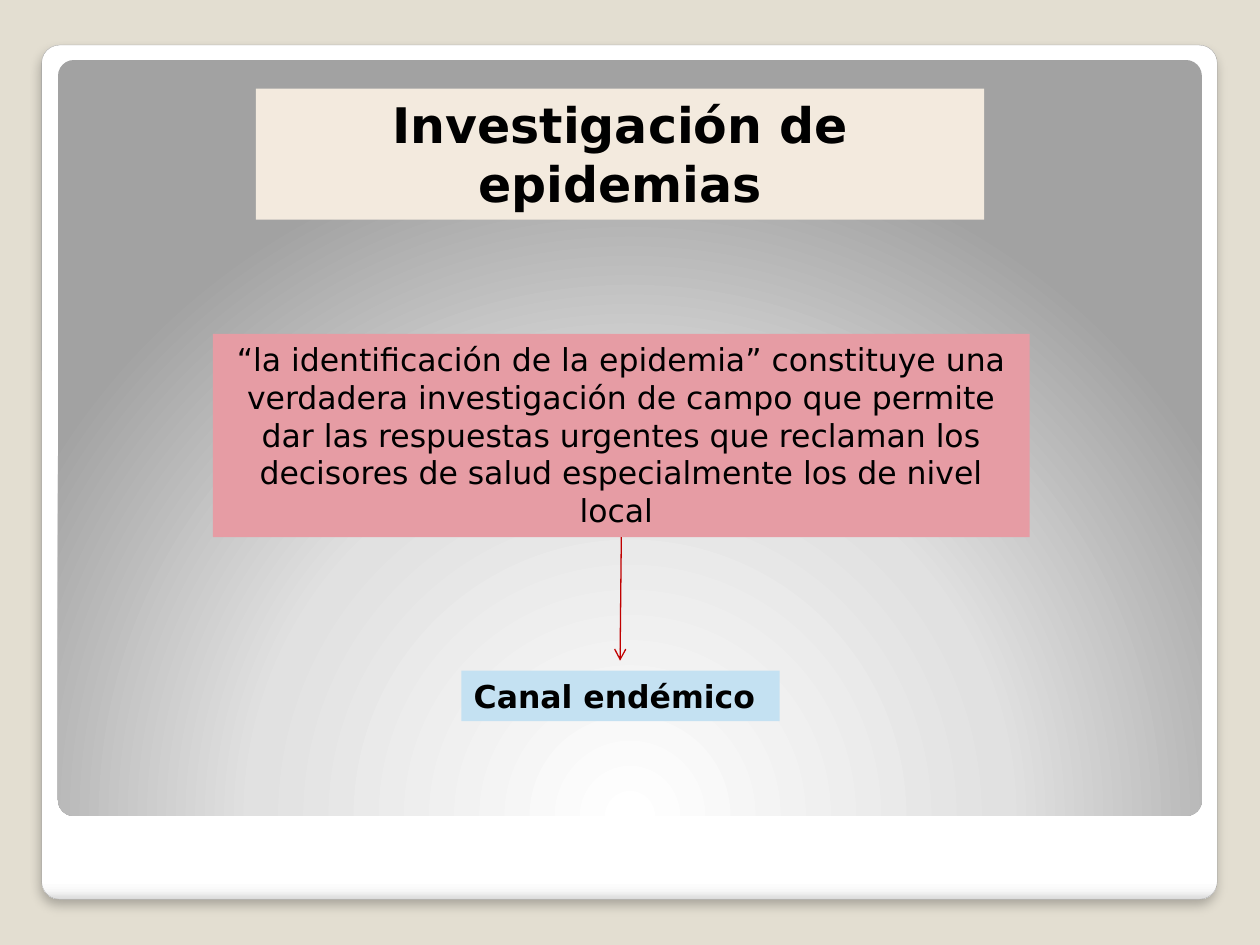
from lxml import etree
from pptx import Presentation
from pptx.dml.color import RGBColor
from pptx.enum import shapes as sh, text as tx
from pptx.oxml.ns import qn
from pptx.util import Cm, Pt

SAND = RGBColor(0xE3, 0xDE, 0xD1)
CREAM = RGBColor(0xF3, 0xEA, 0xDE)
PINK = RGBColor(0xE6, 0x9C, 0xA4)
SKY = RGBColor(0xC4, 0xE1, 0xF2)
RED = RGBColor(0xC0, 0x00, 0x00)
GREY = RGBColor(0xA4, 0xA4, 0xA4)
BLACK = RGBColor(0x00, 0x00, 0x00)
WHITE = RGBColor(0xFF, 0xFF, 0xFF)
MIST = RGBColor(0xF7, 0xF7, 0xF7)
SILVER = RGBColor(0xDA, 0xDA, 0xDA)
PALE = RGBColor(0xE1, 0xE1, 0xE1)
STEEL = RGBColor(0xA2, 0xA2, 0xA2)
FONT = "DejaVu Sans"


def node(parent, tag, **attrs):
    return etree.SubElement(parent, qn(tag), {k: str(v) for k, v in attrs.items()})


def shade(shape, stops):
    shape.fill.background()
    props = shape.element.spPr
    grad = etree.Element(qn("a:gradFill"), rotWithShape="1")
    props.replace(props.find(qn("a:noFill")), grad)
    list_ = node(grad, "a:gsLst")
    for pos, color in stops:
        stop = node(list_, "a:gs", pos=pos * 1000)
        node(stop, "a:srgbClr", val=color)
    return grad


def panel(slide, box, stops):
    shape = slide.shapes.add_shape(sh.MSO_SHAPE.ROUNDED_RECTANGLE, *map(Cm, box))
    shape.adjustments[0] = 0.021
    shape.line.fill.background()
    shape.shadow.inherit = False
    return shape, shade(shape, stops)


def frame(slide, box):
    x, y, w, h = box
    card, grad = panel(slide, box, [(0, WHITE), (98, WHITE), (99, MIST), (100, SILVER)])
    node(grad, "a:lin", ang=5400000, scaled=0)
    card.line.color.rgb = GREY
    card.line.width = Pt(0.16)
    glow = node(card.element.spPr.find(qn("a:effectLst")), "a:outerShdw",
                blurRad=Pt(6), dist=Pt(4), dir=5400000, algn="t", rotWithShape=0)
    node(node(glow, "a:srgbClr", val=BLACK), "a:alpha", val=25000)

    inner = (x + 0.33, y + 0.3, w - 0.64, h - 1.98)
    _, grad = panel(slide, inner, [(0, WHITE), (55, PALE), (100, STEEL)])
    round_ = node(grad, "a:path", path="circle")
    node(round_, "a:fillToRect", l=50000, t=175000, r=50000, b=-75000)


def label(slide, box, words, size, color, bold=False, align=tx.PP_ALIGN.CENTER):
    shape = slide.shapes.add_textbox(*map(Cm, box))
    shape.fill.solid()
    shape.fill.fore_color.rgb = color
    body = shape.text_frame
    body.word_wrap = True
    para = body.paragraphs[0]
    para.alignment = align
    run = para.add_run()
    run.text = words
    run.font.name = FONT
    run.font.size = Pt(size)
    run.font.bold = bold
    run.font.color.rgb = BLACK
    return shape


def arrow(slide, start, end):
    line = slide.shapes.add_connector(sh.MSO_CONNECTOR.STRAIGHT, 0, 0, *map(Cm, end))
    line.begin_connect(start, 2)
    line.line.color.rgb = RED
    line.line.width = Pt(0.75)
    props = line.element.spPr
    node(props.find(qn("a:ln")), "a:tailEnd", type="arrow")
    node(props, "a:effectLst")


def content(slide, box):
    x, y, w, h = box
    label(slide, (x + 0.87, y, 14.68, 2.64), "Investigación de epidemias", 28, CREAM, True)
    quote = label(
        slide, (x, y + 4.94, w, 4.1),
        "“la identificación de la epidemia” constituye una verdadera investigación "
        "de campo que permite dar las respuestas urgentes que reclaman los decisores "
        "de salud especialmente los de nivel local ", 18, PINK)
    label(slide, (x + 5.01, y + h - 1.02, 6.42, 1.02), "Canal endémico", 18, SKY, True,
          tx.PP_ALIGN.LEFT)
    arrow(slide, quote, (x + 8.21, y + h - 1.22))


def main():
    deck = Presentation()
    deck.slide_width, deck.slide_height = Cm(25.4), Cm(19.05)
    slide = deck.slides.add_slide(deck.slide_layouts[6])
    back = slide.background.fill
    back.solid()
    back.fore_color.rgb = SAND
    frame(slide, (0.84, 0.91, 23.7, 17.22))
    content(slide, (4.29, 1.79, 16.47, 12.75))
    deck.save("out.pptx")


if __name__ == "__main__":
    main()
